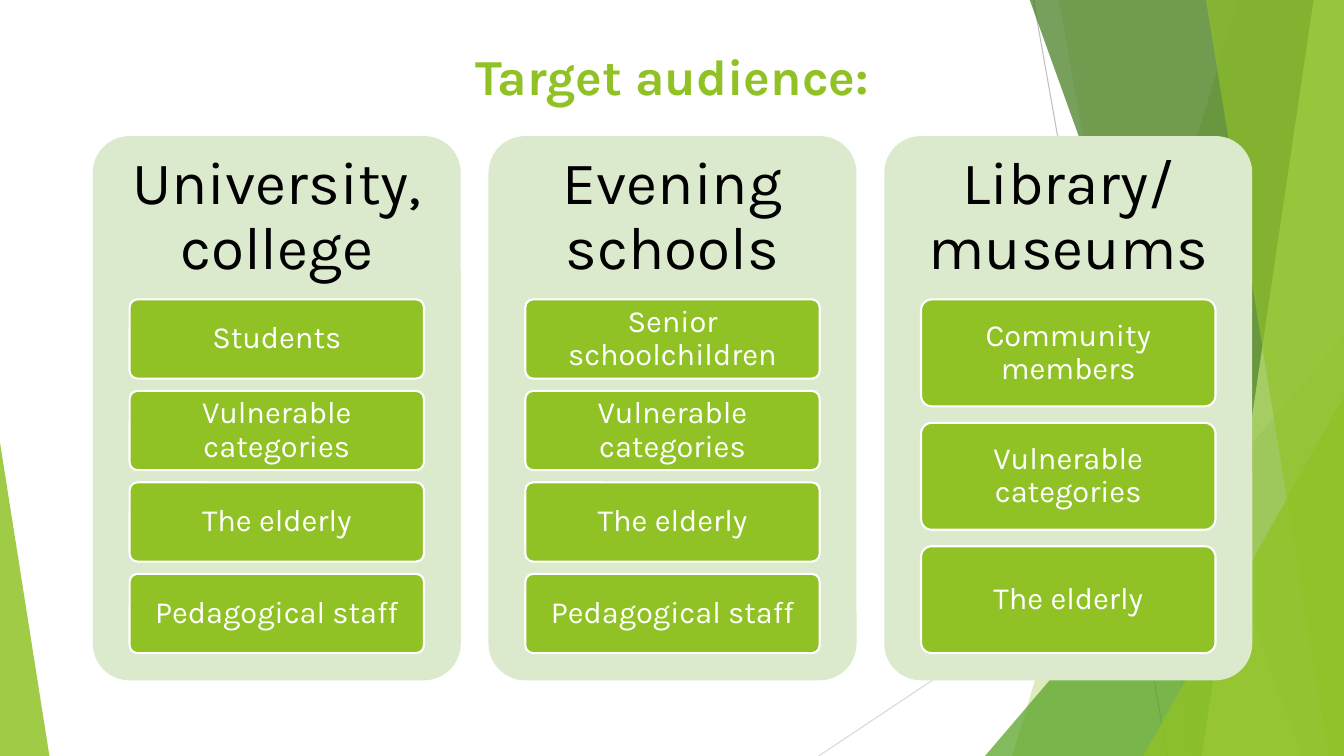
from lxml import etree
from pptx import Presentation
from pptx.dml.color import RGBColor
from pptx.enum.shapes import MSO_CONNECTOR, MSO_SHAPE
from pptx.enum.text import MSO_ANCHOR, PP_ALIGN
from pptx.oxml.ns import qn
from pptx.util import Inches, Pt

ROUND_RECT = MSO_SHAPE.ROUNDED_RECTANGLE
TRIANGLE = MSO_SHAPE.ISOSCELES_TRIANGLE
STRAIGHT = MSO_CONNECTOR.STRAIGHT
CENTER = PP_ALIGN.CENTER
TOP, MIDDLE = MSO_ANCHOR.TOP, MSO_ANCHOR.MIDDLE

FONT = "Karla"
GREEN, PALE, WHITE, BLACK = "90C226", "DBE9CD", "FFFFFF", "000000"

TITLE = "Target audience:"
COLUMNS = [
    ("University, college",
     ["Students", "Vulnerable categories", "The elderly", "Pedagogical staff"]),
    ("Evening schools",
     ["Senior schoolchildren", "Vulnerable categories", "The elderly", "Pedagogical staff"]),
    ("Library/ museums",
     ["Community members", "Vulnerable categories", "The elderly"]),
]

# Background lines: start, end, colour
RAYS = [
    ((10.25, 0), (11.58, 7.5), "BFBFBF"),
    ((13.33, 4.03), (8.12, 7.5), "D9D9D9"),
]

# Background facets, back to front: colour, opacity in percent, outline.
# A band runs from the right edge to its top and bottom x;
# a triangle has left, top, width, height and apex position.
FACETS = [
    (GREEN, 30, {"band": (12.28, 10.04)}),
    (GREEN, 20, {"band": (10.5, 11.83)}),
    ("54A021", 72, {"triangle": (9.77, 3.33, 3.56, 4.17, 1)}),
    ("3F7819", 70, {"band": (10.21, 12.91)}),
    ("C0E474", 70, {"band": (13.03, 11.92)}),
    (GREEN, 65, {"band": (11.96, 13.18)}),
    (GREEN, 80, {"triangle": (11.34, 3.93, 1.99, 3.57, 1)}),
    (GREEN, 85, {"triangle": (0, 4.39, 0.49, 3.11, 0)}),
]

SLIDE_W, SLIDE_H = 13.33, 7.5
BAND_TOP = -0.01
LEFT, PANEL_TOP, TOTAL_W, PANEL_H = 0.92, 1.35, 11.5, 5.4
PANEL_W = 3.65
PANEL_STEP = (TOTAL_W - PANEL_W) / (len(COLUMNS) - 1)
HEADER_H = PANEL_H * 0.3
STACK_H = PANEL_H * 0.65
BOX_W = PANEL_W * 0.8
GAP_RATIO = 2 / 13  # gap between boxes, as a share of box height


def rgb(hex_colour):
    return RGBColor.from_string(hex_colour)


def style(sp, fill, opacity=100, line=None):
    sp.shadow.inherit = False
    sp.fill.solid()
    sp.fill.fore_color.rgb = rgb(fill)
    if opacity < 100:
        clr = sp.fill._xPr.find(qn("a:solidFill"))[0]
        etree.SubElement(clr, qn("a:alpha"), val=str(opacity * 1000))
    if line:
        sp.line.color.rgb = rgb(line)
        sp.line.width = Pt(1.5)
    else:
        sp.line.fill.background()


def add_shape(kind, x, y, w, h, adj):
    sp = slide.shapes.add_shape(kind, Inches(x), Inches(y), Inches(w), Inches(h))
    sp.adjustments[0] = adj
    return sp


def add_band(top_x, bottom_x):
    pts = [(Inches(x), Inches(y)) for x, y in (
        (top_x, BAND_TOP), (SLIDE_W, BAND_TOP), (SLIDE_W, SLIDE_H), (bottom_x, SLIDE_H))]
    builder = slide.shapes.build_freeform(*pts[0])
    builder.add_line_segments(pts[1:], close=True)
    return builder.convert_to_shape()


def set_text(sp, text, size, colour, inset, anchor=MIDDLE, spacing=0.9, bold=False):
    """Inset is the horizontal and vertical margin in inches."""
    tf = sp.text_frame
    tf.word_wrap = True
    tf.vertical_anchor = anchor
    tf.margin_left = tf.margin_right = Inches(inset[0])
    tf.margin_top = tf.margin_bottom = Inches(inset[1])
    tf.text = text
    p = tf.paragraphs[0]
    p.alignment = CENTER
    p.line_spacing = spacing
    font = p.runs[0].font
    font.name, font.size, font.bold = FONT, Pt(size), bold
    font.color.rgb = rgb(colour)


def add_textbox(x, y, w, h):
    return slide.shapes.add_textbox(Inches(x), Inches(y), Inches(w), Inches(h))


prs = Presentation()
prs.slide_width, prs.slide_height = Inches(SLIDE_W), Inches(SLIDE_H)
slide = prs.slides.add_slide(prs.slide_layouts[6])

for start, end, colour in RAYS:
    ray = slide.shapes.add_connector(STRAIGHT, *(Inches(v) for v in start + end))
    ray.line.color.rgb = rgb(colour)
    ray.line.width = Pt(0.75)
    etree.SubElement(ray._element.spPr, qn("a:effectLst"))

for colour, opacity, outline in FACETS:
    if "band" in outline:
        facet = add_band(*outline["band"])
    else:
        facet = add_shape(TRIANGLE, *outline["triangle"])
    style(facet, colour, opacity)

set_text(add_textbox(LEFT, 0.4, TOTAL_W, 0.95), TITLE, 36, GREEN, (0.1, 0.05),
         anchor=TOP, spacing=1.0, bold=True)

for col, (heading, audiences) in enumerate(COLUMNS):
    x = LEFT + col * PANEL_STEP
    style(add_shape(ROUND_RECT, x, PANEL_TOP, PANEL_W, PANEL_H, 0.1), PALE)
    set_text(add_textbox(x, PANEL_TOP, PANEL_W, HEADER_H), heading, 43, BLACK, (0.18, 0.18))

    n = len(audiences)
    box_h = STACK_H / (n + (n - 1) * GAP_RATIO)
    box_x = x + (PANEL_W - BOX_W) / 2
    for row, audience in enumerate(audiences):
        box_y = PANEL_TOP + HEADER_H + row * box_h * (1 + GAP_RATIO)
        box = add_shape(ROUND_RECT, box_x, box_y, BOX_W, box_h, 0.1)
        style(box, GREEN, line=WHITE)
        set_text(box, audience, 22, WHITE, (0.06, 0.05))

prs.save("out.pptx")
